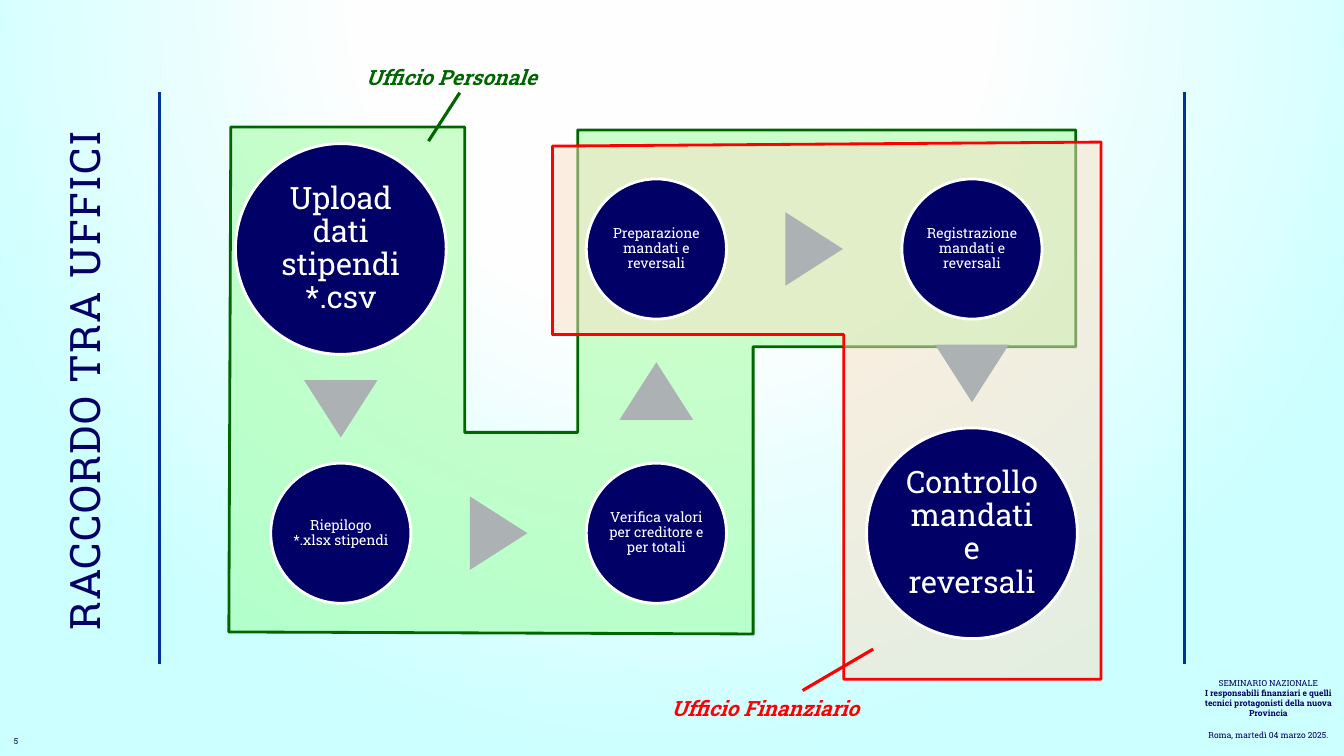
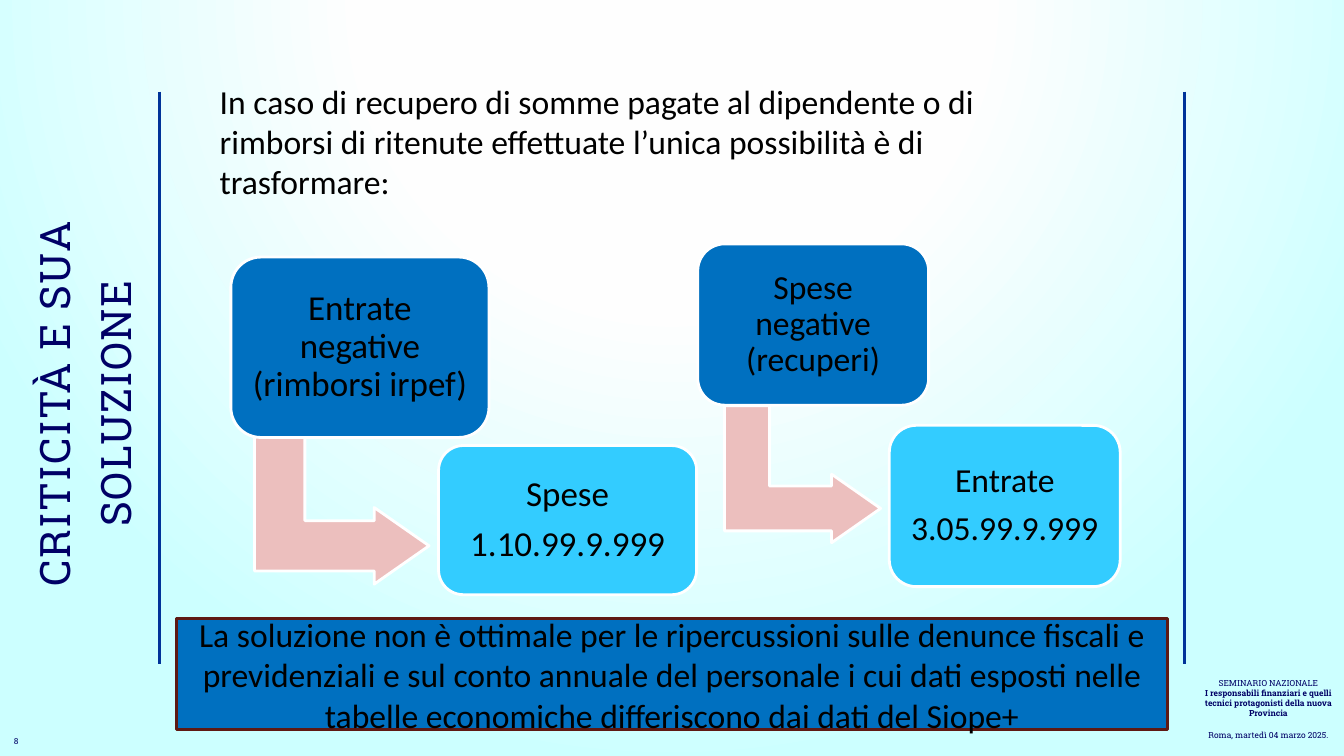
from lxml import etree
from pptx import Presentation
from pptx.dml.color import RGBColor
from pptx.enum.shapes import MSO_CONNECTOR, MSO_SHAPE
from pptx.enum.text import MSO_ANCHOR, PP_ALIGN
from pptx.oxml import parse_xml
from pptx.oxml.ns import qn
from pptx.util import Inches, Pt

LEFT, CENTER = PP_ALIGN.LEFT, PP_ALIGN.CENTER
TOP, MIDDLE = MSO_ANCHOR.TOP, MSO_ANCHOR.MIDDLE
OVAL, TRIANGLE = MSO_SHAPE.OVAL, MSO_SHAPE.ISOSCELES_TRIANGLE
RECT, ROUND_RECT = MSO_SHAPE.RECTANGLE, MSO_SHAPE.ROUNDED_RECTANGLE
BENT_ARROW = MSO_SHAPE.BENT_UP_ARROW
STRAIGHT = MSO_CONNECTOR.STRAIGHT

NAVY, RULE_BLUE, WHITE, BLACK = "000066", "003399", "FFFFFF", "000000"
GREEN, LIGHT_GREEN, RED, PEACH, GRAY = "006600", "99FF99", "FF0000", "FADFC4", "ACB1B4"
BLUE, CYAN, PINK, MAROON = "0070C0", "33CCFF", "ECBFBE", "5E1913"
SLAB, CALIBRI = "Roboto Slab", "Calibri"
BACKGROUND_STOPS = [(0, WHITE), (40, "FEFEFE"), (100, "CCFFFF")]


def rgb(value):
    return RGBColor.from_string(value)


def set_background(master):
    master.background.fill.solid()
    bg = master.element.find(".//" + qn("p:bgPr"))
    stops = "".join(
        f'<a:gs pos="{pos * 1000}"><a:srgbClr val="{color}"/></a:gs>'
        for pos, color in BACKGROUND_STOPS)
    gradient = parse_xml(
        '<a:gradFill xmlns:a="http://schemas.openxmlformats.org/drawingml/2006/main" rotWithShape="1">'
        f'<a:gsLst>{stops}</a:gsLst><a:path path="circle">'
        '<a:fillToRect l="50000" t="-80000" r="50000" b="180000"/></a:path></a:gradFill>')
    bg.replace(bg.find(qn("a:solidFill")), gradient)


def write(sp, paragraphs, size, color, font=SLAB, align=CENTER, anchor=MIDDLE,
          inset=None, spacing=None, gap=0, bold=False, italic=False, tracking=0):
    tf = sp.text_frame
    tf.word_wrap = True
    tf.vertical_anchor = anchor
    if inset is not None:
        tf.margin_left = tf.margin_right = tf.margin_top = tf.margin_bottom = Inches(inset)
    for i, text in enumerate(paragraphs):
        p = tf.add_paragraph() if i else tf.paragraphs[0]
        p.alignment = align
        if spacing:
            p.line_spacing = spacing
        if i and gap:
            p.space_before = Pt(gap)
        r = p.add_run()
        r.text = text
        r.font.name, r.font.size = font, Pt(size)
        r.font.bold, r.font.italic = bold, italic
        r.font.color.rgb = rgb(color)
        if tracking:
            r.font._element.set("spc", str(tracking * 100))
    return tf


def add_text(s, box, paragraphs, size, color, **style):
    sp = s.shapes.add_textbox(*map(Inches, box))
    return sp, write(sp, paragraphs, size, color, **style)


def paint(sp, fill, line=None):
    sp.shadow.inherit = False
    sp.fill.solid()
    sp.fill.fore_color.rgb = rgb(fill)
    if line:
        sp.line.color.rgb = rgb(line)
        sp.line.width = Pt(2)
    else:
        sp.line.fill.background()


def add_shape(s, kind, box, fill, line=None, rotation=0, adjustments=()):
    sp = s.shapes.add_shape(kind, *map(Inches, box))
    sp.rotation = rotation
    for i, value in enumerate(adjustments):
        sp.adjustments[i] = value
    paint(sp, fill, line)
    return sp


def add_line(s, start, end, color):
    line = s.shapes.add_connector(STRAIGHT, *map(Inches, (*start, *end)))
    line.line.color.rgb = rgb(color)
    line.line.width = Pt(2.25)
    etree.SubElement(line._element.spPr, qn("a:effectLst"))


def add_area(s, points, fill, line):
    first, *rest = [tuple(map(Inches, point)) for point in points]
    builder = s.shapes.build_freeform(*first)
    builder.add_line_segments(rest, close=True)
    sp = builder.convert_to_shape()
    paint(sp, fill, line)
    color = sp._element.spPr.find(qn("a:solidFill")).find(qn("a:srgbClr"))
    etree.SubElement(color, qn("a:alpha")).set("val", "50000")


def add_base(prs, number, title, title_top):
    s = prs.slides.add_slide(prs.slide_layouts[6])
    for x in (11.75, 1.58):
        add_line(s, (x, 0.91), (x, 6.59), RULE_BLUE)
    _, tf = add_text(s, (11.81, 6.68, 1.54, 0.71), [
        "SEMINARIO NAZIONALE",
        "I responsabili finanziari e quelli tecnici protagonisti della nuova Provincia",
        "Roma, martedì 04 marzo 2025."], 6, NAVY, anchor=TOP)
    tf.paragraphs[1].runs[0].font.bold = True
    tf.paragraphs[2].space_before = Pt(8)
    add_text(s, (0.04, 7.25, 1.54, 0.2), [number], 6, NAVY, align=LEFT, anchor=TOP)
    sp, _ = add_text(s, (-2.05, title_top, 5.67, 1.58), [title], 30, NAVY,
                     spacing=1.2, tracking=1)
    sp.rotation = 270
    return s


def add_process(s, left, top, col_pitch, row_pitch, steps):
    placed = []
    for col, row, diameter, size, text in steps:
        x, y, radius = left + col * col_pitch, top + row * row_pitch, diameter / 2
        sp = add_shape(s, OVAL, (x - radius, y - radius, diameter, diameter), NAVY, WHITE)
        write(sp, [text], size, WHITE, inset=0.02, spacing=0.9)
        placed.append((x, y, radius))
    width, height = 0.73, 0.57
    for (x1, y1, r1), (x2, y2, r2) in zip(placed, placed[1:]):
        if y1 == y2:
            x, y, rotation = (x1 + r1 + x2 - r2) / 2, y1, 90
        else:
            down = 1 if y2 > y1 else -1
            x, y = x1, (y1 + down * r1 + y2 - down * r2) / 2
            rotation = 180 if down > 0 else 0
        add_shape(s, TRIANGLE, (x - width / 2, y - height / 2, width, height), GRAY,
                  rotation=rotation)


def add_office_label(s, left, top, text, color, start, end):
    add_text(s, (left, top, 2.5, 0.36), [text], 15, color, align=LEFT, anchor=TOP,
             spacing=1.07, bold=True, italic=True)
    add_line(s, start, end, color)


def add_conversion(s, left, top, width, height, arrow_at, result_at, result_height,
                   size, source, result):
    def at(offset):
        return left + offset[0], top + offset[1]

    add_shape(s, BENT_ARROW, (*at(arrow_at), width * 0.594, width * 0.676), PINK, WHITE,
              rotation=90, adjustments=(0.328, 0.25, 0.358))
    for box, fill, paragraphs in [
            ((left, top, width, height), BLUE, source),
            ((*at(result_at), width, result_height), CYAN, result)]:
        sp = add_shape(s, ROUND_RECT, box, fill, WHITE, adjustments=(0.167,))
        write(sp, paragraphs, size, BLACK, font=CALIBRI, inset=0.1, spacing=0.9,
              gap=size * 0.35)


def build_offices(prs):
    s = add_base(prs, "5", "RACCORDO TRA UFFICI", 2.99)
    add_area(s, [(2.29, 1.26), (4.61, 1.26), (4.61, 4.29), (5.73, 4.29), (5.73, 1.29),
                 (10.67, 1.29), (10.67, 3.44), (7.47, 3.44), (7.47, 6.29), (2.27, 6.27)],
             LIGHT_GREEN, GREEN)
    add_area(s, [(5.48, 1.45), (5.48, 3.32), (8.37, 3.32), (8.37, 6.74),
                 (10.92, 6.74), (10.92, 1.41)], PEACH, RED)
    large, small = (2.09, 22), (1.39, 10)
    add_process(s, 3.38, 2.47, 3.13, 2.82, [
        (0, 0, *large, "Upload dati stipendi *.csv"),
        (0, 1, *small, "Riepilogo *.xlsx stipendi"),
        (1, 1, *small, "Verifica valori per creditore e per totali"),
        (1, 0, *small, "Preparazione mandati e reversali"),
        (2, 0, *small, "Registrazione mandati e reversali"),
        (2, 1, *large, "Controllo mandati e reversali")])
    add_office_label(s, 3.53, 0.57, "Ufficio Personale", GREEN, (4.25, 1.4), (4.56, 0.92))
    add_office_label(s, 6.56, 6.83, "Ufficio Finanziario", RED, (7.96, 6.85), (8.66, 6.44))


def build_solution(prs):
    s = add_base(prs, "8", "CRITICITÀ E SUA SOLUZIONE", 3.21)
    add_text(s, (2.08, 0.75, 7.92, 1.31), [
        "In caso di recupero di somme pagate al dipendente o di rimborsi di ritenute "
        "effettuate l’unica possibilità è di trasformare:"],
        24, BLACK, font=CALIBRI, align=LEFT, anchor=TOP)
    add_conversion(s, 2.29, 2.55, 2.56, 1.79, (0.34, 1.62), (2.06, 1.87), 1.48, 25,
                   ["Entrate negative (rimborsi irpef)"], ["Spese", "1.10.99.9.999"])
    add_conversion(s, 6.92, 2.42, 2.29, 1.6, (0.36, 1.51), (1.9, 1.8), 1.6, 24,
                   ["Spese negative (recuperi)"], ["Entrate", "3.05.99.9.999"])
    sp = add_shape(s, RECT, (1.75, 6.14, 9.83, 1.1), BLUE, MAROON)
    write(sp, [
        "La soluzione non è ottimale per le ripercussioni sulle denunce fiscali e "
        "previdenziali e sul conto annuale del personale i cui dati esposti nelle "
        "tabelle economiche differiscono dai dati del Siope+"], 24, BLACK, font=CALIBRI)


def main():
    prs = Presentation()
    prs.slide_width, prs.slide_height = Inches(13.33), Inches(7.5)
    set_background(prs.slide_master)
    build_offices(prs)
    build_solution(prs)
    prs.save("out.pptx")


if __name__ == "__main__":
    main()
